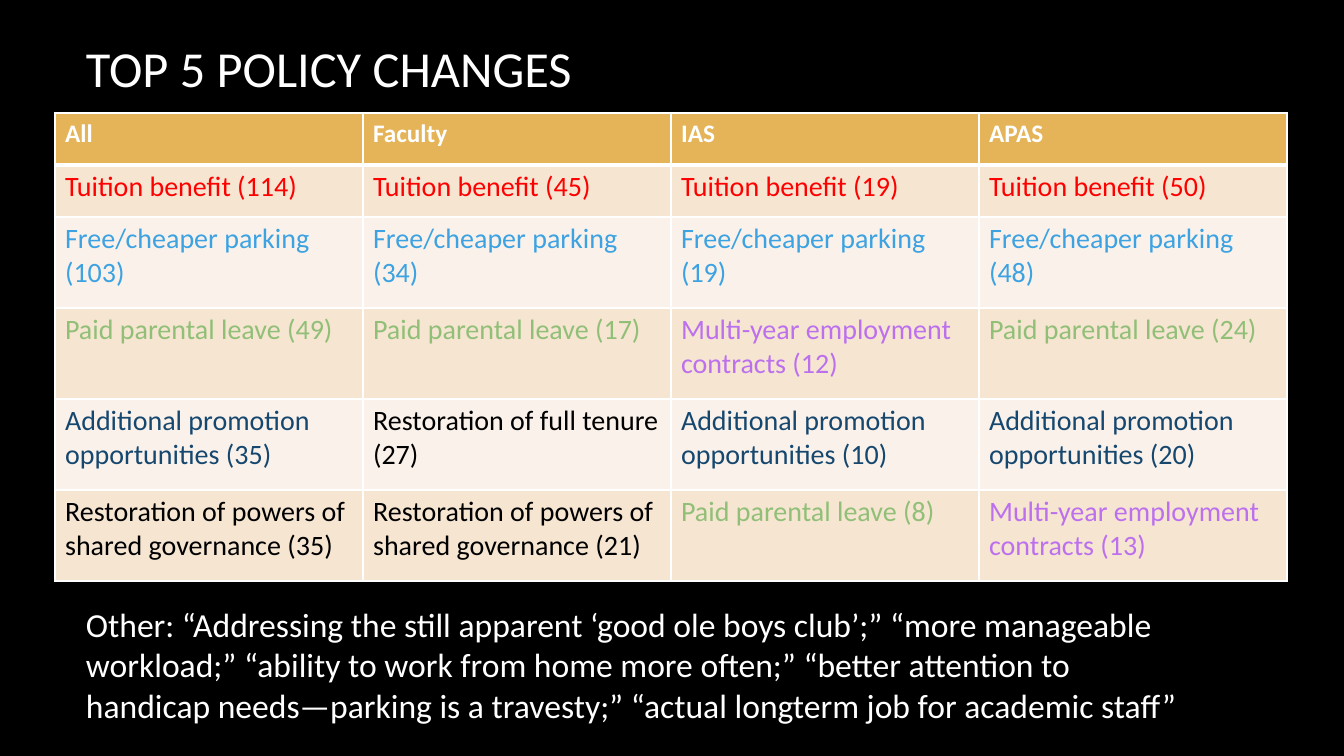
from dataclasses import dataclass

from lxml import etree
from pptx import Presentation
from pptx import util as u
from pptx.dml.color import RGBColor
from pptx.enum import text
from pptx.oxml import ns

EMU_PER_PX = 914400 / 100.8
FONT = "Calibri"
WHITE = "FFFFFF"
BLACK = "000000"
HEADER_FILL = "E5B458"
BAND_FILLS = ("F5E5D1", "FAF2EA")
HEADERS = ("All", "Faculty", "IAS", "APAS")
COLUMN_WIDTH = 308
ROW_HEIGHTS = (52, 52, 91, 91, 91, 91)


@dataclass(frozen=True)
class Policy:
    name: str
    color: str


@dataclass(frozen=True)
class Caption:
    words: str
    left: int
    top: int
    width: int
    height: int
    size: int
    anchor: text.MSO_ANCHOR
    fit: text.MSO_AUTO_SIZE


TUITION = Policy("Tuition benefit", "FF0000")
PARKING = Policy("Free/cheaper parking", "3CA2E2")
LEAVE = Policy("Paid parental leave", "91BF77")
CONTRACTS = Policy("Multi-year employment contracts", "BC70EE")
PROMOTION = Policy("Additional promotion opportunities", "16476F")
TENURE = Policy("Restoration of full tenure", BLACK)
GOVERNANCE = Policy("Restoration of powers of shared governance", BLACK)

RANKINGS = (
    ((TUITION, 114), (TUITION, 45), (TUITION, 19), (TUITION, 50)),
    ((PARKING, 103), (PARKING, 34), (PARKING, 19), (PARKING, 48)),
    ((LEAVE, 49), (LEAVE, 17), (CONTRACTS, 12), (LEAVE, 24)),
    ((PROMOTION, 35), (TENURE, 27), (PROMOTION, 10), (PROMOTION, 20)),
    ((GOVERNANCE, 35), (GOVERNANCE, 21), (LEAVE, 8), (CONTRACTS, 13)),
)

CAPTIONS = (
    Caption("TOP 5 POLICY CHANGES", 76, 21, 1117, 92, 36,
            text.MSO_ANCHOR.MIDDLE, text.MSO_AUTO_SIZE.NONE),
    Caption("Other: “Addressing the still apparent ‘good ole boys club’;” “more manageable "
            "workload;” “ability to work from home more often;” “better attention to "
            "handicap needs—parking is a travesty;” “actual longterm job for academic staff”",
            76, 599, 1117, 132, 24,
            text.MSO_ANCHOR.TOP, text.MSO_AUTO_SIZE.SHAPE_TO_FIT_TEXT),
)


def px(length: int) -> u.Emu:
    return u.Emu(round(length * EMU_PER_PX))


def rgb(value: str) -> RGBColor:
    return RGBColor.from_string(value)


def write(frame, words: str, *, size: int, color: str = WHITE, bold: bool = False) -> None:
    span = frame.paragraphs[0].add_run()
    span.text = words
    span.font.name = FONT
    span.font.size = u.Pt(size)
    span.font.bold = bold
    span.font.color.rgb = rgb(color)


def add_caption(page, caption: Caption) -> None:
    box = page.shapes.add_textbox(
        px(caption.left), px(caption.top), px(caption.width), px(caption.height))
    frame = box.text_frame
    frame.word_wrap = True
    frame.auto_size = caption.fit
    frame.vertical_anchor = caption.anchor
    write(frame, caption.words, size=caption.size)


def set_borders(cell, top: int, bottom: int) -> None:
    properties = cell._tc.get_or_add_tcPr()
    widths = {"a:lnL": 1, "a:lnR": 1, "a:lnT": top, "a:lnB": bottom}
    for position, (side, width) in enumerate(widths.items()):
        line = etree.Element(ns.qn(side), w=str(u.Pt(width)))
        fill = etree.SubElement(line, ns.qn("a:solidFill"))
        etree.SubElement(fill, ns.qn("a:srgbClr"), val=WHITE)
        properties.insert(position, line)


def fill_cell(cell, color: str) -> None:
    cell.fill.solid()
    cell.fill.fore_color.rgb = rgb(color)


def add_policy_table(page) -> None:
    table = page.shapes.add_table(
        len(ROW_HEIGHTS), len(HEADERS), px(55), px(113),
        px(COLUMN_WIDTH * len(HEADERS)), px(sum(ROW_HEIGHTS))).table
    for column in table.columns:
        column.width = px(COLUMN_WIDTH)
    for row, height in zip(table.rows, ROW_HEIGHTS):
        row.height = px(height)
    for column, header in enumerate(HEADERS):
        cell = table.cell(0, column)
        fill_cell(cell, HEADER_FILL)
        set_borders(cell, top=1, bottom=3)
        write(cell.text_frame, header, size=18, bold=True)
    for row, ranking in enumerate(RANKINGS, start=1):
        for column, (policy, votes) in enumerate(ranking):
            cell = table.cell(row, column)
            fill_cell(cell, BAND_FILLS[(row - 1) % 2])
            set_borders(cell, top=3 if row == 1 else 1, bottom=1)
            write(cell.text_frame, f"{policy.name} ({votes})", size=20, color=policy.color)


def main() -> None:
    deck = Presentation()
    deck.slide_width, deck.slide_height = px(1344), px(756)
    page = deck.slides.add_slide(deck.slide_layouts[6])
    page.background.fill.solid()
    page.background.fill.fore_color.rgb = rgb(BLACK)
    title, other = CAPTIONS
    add_caption(page, title)
    add_policy_table(page)
    add_caption(page, other)
    deck.save("out.pptx")


if __name__ == "__main__":
    main()
